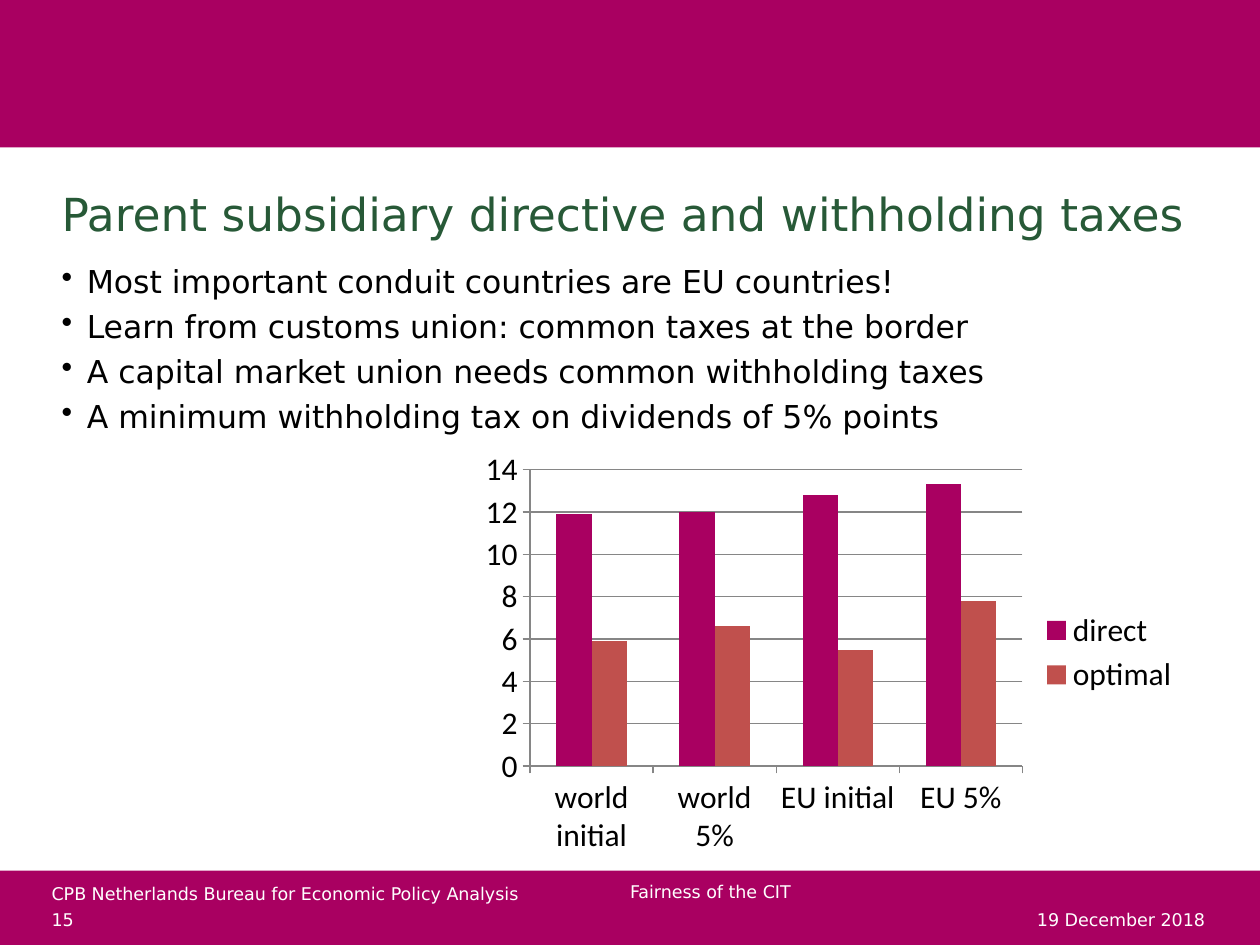
"""Build a slide on withholding taxes with bullets and a clustered column chart."""
from dataclasses import dataclass

import pptx
import pptx.chart.data
import pptx.dml.color
import pptx.enum.chart
import pptx.enum.shapes
import pptx.enum.text
import pptx.oxml.ns
import pptx.util
from lxml import etree

Inches = pptx.util.Inches
Pt = pptx.util.Pt
Anchor = pptx.enum.text.MSO_ANCHOR

TEXT_FONT = "DejaVu Sans"
CHART_FONT = "Calibri"
MAGENTA, RED, GREEN = "A90061", "C0504D", "275937"
WHITE, BLACK, GRAY = "FFFFFF", "000000", "868686"


@dataclass
class Band:
    top: float
    height: float


@dataclass
class Label:
    lines: list[str]
    left: float
    top: float
    width: float
    height: float
    size: float = 10
    color: str = WHITE
    anchor: Anchor = Anchor.TOP
    inset: bool = False
    bullet: bool = False


@dataclass
class Series:
    name: str
    values: list[float]
    color: str


BANDS = [Band(6.91, 0.59), Band(0, 1.17)]
BULLETS = [
    "Most important conduit countries are EU countries!",
    "Learn from customs union: common taxes at the border",
    "A capital market union needs common withholding taxes",
    "A minimum withholding tax on dividends of 5% points",
]
LABELS = [
    Label(["CPB Netherlands Bureau for Economic Policy Analysis"], 0.41, 7.01, 4.04, 0.17),
    Label(["Parent subsidiary directive and withholding taxes"], 0.39, 1.38, 9.21, 0.63,
          size=26, color=GREEN, anchor=Anchor.MIDDLE, inset=True),
    Label(["19 December 2018"], 8.23, 7.2, 1.38, 0.2, anchor=Anchor.MIDDLE),
    Label(["Fairness of the CIT"], 5, 6.99, 3.11, 0.39),
    Label(["15"], 0.41, 7.2, 0.75, 0.2, anchor=Anchor.MIDDLE),
    Label(BULLETS, 0.39, 2.03, 9.22, 4.72, size=18, color=BLACK, inset=True, bullet=True),
]
CATEGORIES = ["world initial", "world 5%", "EU initial", "EU 5%"]
SERIES = [
    Series("direct", [11.9, 12, 12.8, 13.3], MAGENTA),
    Series("optimal", [5.9, 6.6, 5.5, 7.8], RED),
]


def rgb(color: str) -> pptx.dml.color.RGBColor:
    return pptx.dml.color.RGBColor.from_string(color)


def style_font(font, name: str, size: float, color: str) -> None:
    font.name = name
    font.size = Pt(size)
    font.color.rgb = rgb(color)


def draw_band(page, band: Band) -> None:
    shape = page.shapes.add_shape(
        pptx.enum.shapes.MSO_SHAPE.RECTANGLE,
        Inches(0), Inches(band.top), Inches(10), Inches(band.height))
    shape.shadow.inherit = False
    shape.fill.solid()
    shape.fill.fore_color.rgb = rgb(MAGENTA)
    shape.line.fill.background()


def add_bullet(para) -> None:
    properties = para._p.get_or_add_pPr()
    properties.set("marL", str(Inches(0.2)))
    properties.set("indent", str(Inches(-0.2)))
    mark = etree.SubElement(properties, pptx.oxml.ns.qn("a:buChar"))
    mark.set("char", "•")


def draw_label(page, label: Label) -> None:
    box = page.shapes.add_textbox(
        Inches(label.left), Inches(label.top), Inches(label.width), Inches(label.height))
    frame = box.text_frame
    frame.word_wrap = True
    frame.vertical_anchor = label.anchor
    if not label.inset:
        frame.margin_left = frame.margin_right = Inches(0)
        frame.margin_top = frame.margin_bottom = Inches(0)
    for index, line in enumerate(label.lines):
        para = frame.add_paragraph() if index else frame.paragraphs[0]
        if label.bullet:
            add_bullet(para)
        if index:
            para.space_before = Pt(label.size * 0.23)
        span = para.add_run()
        span.text = line
        style_font(span.font, TEXT_FONT, label.size, label.color)


def draw_chart(page) -> None:
    data = pptx.chart.data.CategoryChartData()
    data.categories = CATEGORIES
    for series in SERIES:
        data.add_series(series.name, series.values)
    chart = page.shapes.add_chart(
        pptx.enum.chart.XL_CHART_TYPE.COLUMN_CLUSTERED,
        Inches(3.74), Inches(3.51), Inches(5.72), Inches(3.34), data).chart
    style_font(chart.font, CHART_FONT, 18, BLACK)
    chart.has_title = False
    chart.has_legend = True
    chart.legend.position = pptx.enum.chart.XL_LEGEND_POSITION.RIGHT
    chart.legend.include_in_layout = False
    chart.value_axis.minimum_scale = 0
    chart.value_axis.maximum_scale = 14
    chart.value_axis.major_unit = 2
    for axis in (chart.category_axis, chart.value_axis):
        axis.major_tick_mark = pptx.enum.chart.XL_TICK_MARK.OUTSIDE
        axis.format.line.color.rgb = rgb(GRAY)
    chart.value_axis.has_major_gridlines = True
    chart.value_axis.major_gridlines.format.line.color.rgb = rgb(GRAY)
    plot = chart.plots[0]
    plot.gap_width = 150
    plot.overlap = 0
    plot.vary_by_categories = False
    for column, series in zip(plot.series, SERIES):
        column.format.fill.solid()
        column.format.fill.fore_color.rgb = rgb(series.color)


def main() -> None:
    deck = pptx.Presentation()
    deck.slide_width = Inches(10)
    deck.slide_height = Inches(7.5)
    page = deck.slides.add_slide(deck.slide_layouts[6])
    for band in BANDS:
        draw_band(page, band)
    for label in LABELS:
        draw_label(page, label)
    draw_chart(page)
    deck.save("out.pptx")


if __name__ == "__main__":
    main()
